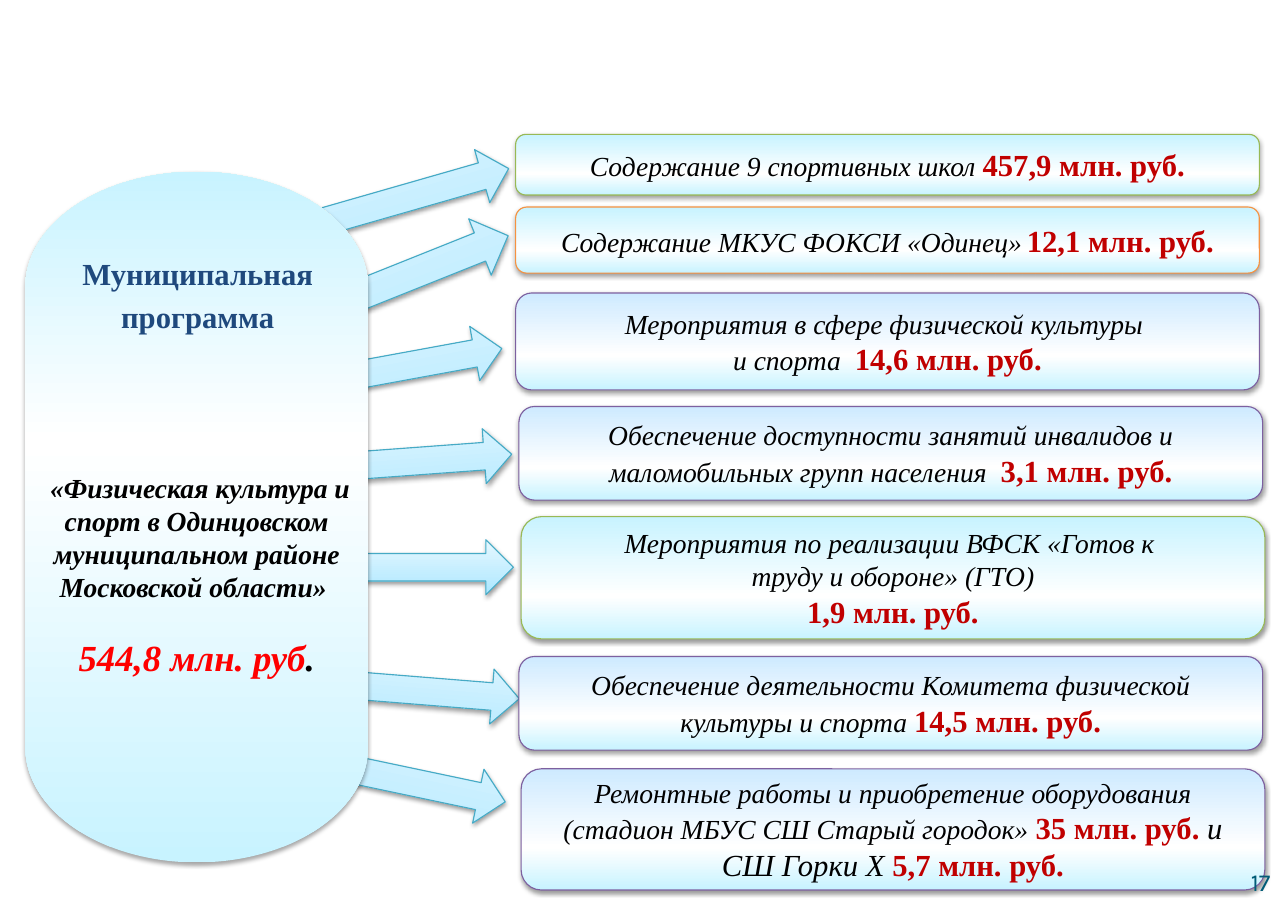
from dataclasses import dataclass

from lxml import etree
from pptx import Presentation
from pptx.dml.color import RGBColor
from pptx.enum.shapes import MSO_SHAPE
from pptx.enum.text import MSO_ANCHOR, PP_ALIGN
from pptx.oxml.ns import qn
from pptx.util import Emu, Pt

ARROW = MSO_SHAPE.RIGHT_ARROW
DISK = MSO_SHAPE.FLOWCHART_MAGNETIC_DISK
ROUND = MSO_SHAPE.ROUNDED_RECTANGLE
MIDDLE = MSO_ANCHOR.MIDDLE
CENTER = PP_ALIGN.CENTER
RIGHT = PP_ALIGN.RIGHT

PX = 9144  # 100 px to the inch
SERIF = "Times New Roman"
COLORS = {
    "black": "000000", "sum": "C00000", "total": "FF0000", "head": "1F497D",
    "page": "005B76", "white": "FFFFFF", "aqua": "C8F3FF", "sky": "CEEAFF",
    "deep": "A7E6FF", "mid": "C1EDFF", "pale": "E7F8FF",
    "teal": "46AAC5", "green": "98B955", "orange": "F69240", "purple": "7D60A0",
}


@dataclass(frozen=True)
class Style:
    size: int
    color: str = "black"
    bold: bool = False
    italic: bool = False
    font: str = SERIF


@dataclass(frozen=True)
class Run:
    text: str
    style: Style


@dataclass(frozen=True)
class Arrow:
    left: int
    top: int
    width: int
    height: int
    turn: float


@dataclass(frozen=True)
class Item:
    left: int
    top: int
    height: int
    edge: str
    lines: list[list[Run]]


BODY = Style(18, italic=True)
LARGE = Style(20, italic=True)
SUM = Style(20, "sum", bold=True)
GAP = Style(12)
HEAD = Style(20, "head", bold=True)
NAME = Style(18, bold=True, italic=True)
TOTAL = Style(24, "total", bold=True, italic=True)
DOT = Style(24, bold=True, italic=True)
PAGE = Style(16, "page", font="Karla")

ARROWS = [
    Arrow(42, 187, 428, 50, 344),
    Arrow(65, 593, 407, 50, 4.6),
    Arrow(37, 403, 428, 50, 355.8),
    Arrow(31, 330, 428, 50, 349.6),
    Arrow(56, 661, 407, 50, 11.9),
    Arrow(38, 490, 428, 50, 0),
    Arrow(90, 258, 385, 55, 338.2),
]

ITEMS = [
    Item(468, 122, 55, "green", [
        [Run("Содержание 9 спортивных школ ", BODY), Run("457,9 млн. руб.", SUM)]]),
    Item(468, 188, 60, "orange", [
        [Run("Содержание МКУС ФОКСИ «Одинец»", BODY), Run(" ", GAP),
         Run("12,1 млн. руб.", SUM)]]),
    Item(468, 266, 88, "purple", [
        [Run("Мероприятия в сфере физической культуры ", BODY)],
        [Run("и спорта  ", BODY), Run("14,6 млн. руб.", SUM)]]),
    Item(471, 369, 85, "purple", [
        [Run("Обеспечение доступности занятий инвалидов и "
             "маломобильных групп населения  ", BODY),
         Run("3,1 млн. руб.", SUM)]]),
    Item(473, 469, 111, "green", [
        [Run("Мероприятия по реализации ВФСК «Готов к ", BODY)],
        [Run("труду и обороне» (ГТО)", BODY)],
        [Run("1,9 млн. руб.", SUM)]]),
    Item(471, 596, 85, "purple", [
        [Run("Обеспечение деятельности Комитета физической "
             "культуры и спорта ", BODY),
         Run("14,5 млн. руб.", SUM)]]),
    Item(473, 698, 110, "purple", [
        [Run("Ремонтные работы и приобретение оборудования "
             "(стадион МБУС СШ Старый городок» ", BODY),
         Run("35 млн. руб. ", SUM), Run("и СШ Горки X ", LARGE),
         Run("5,7 млн. руб.", SUM)]]),
]


def px(*nums: int) -> list[Emu]:
    return [Emu(n * PX) for n in nums]


def rgb(name: str) -> RGBColor:
    return RGBColor.from_string(COLORS[name])


def add_color(node, name: str):
    return etree.SubElement(node, qn("a:srgbClr"), val=COLORS[name])


def add_shade(shape, alpha: int, dist: int) -> None:
    shape.shadow.inherit = False
    effects = shape._element.spPr.find(qn("a:effectLst"))
    shade = etree.SubElement(effects, qn("a:outerShdw"), blurRad="40000",
                             dist=str(dist), dir="5400000", rotWithShape="0")
    etree.SubElement(add_color(shade, "black"), qn("a:alpha"), val=str(alpha * 1000))


def add_form(slide, kind, box: tuple, stops: list, edge: str = "",
             alpha: int = 38, dist: int = 20000):
    shape = slide.shapes.add_shape(kind, *px(*box))
    shape.fill.gradient()
    shape.fill.gradient_angle = 90
    ramp = shape._element.spPr.find(".//" + qn("a:gsLst"))
    for old in list(ramp):
        ramp.remove(old)
    for pos, name in stops:
        add_color(etree.SubElement(ramp, qn("a:gs"), pos=str(pos * 1000)), name)
    if edge:
        shape.line.color.rgb = rgb(edge)
        shape.line.width = Pt(0.75)
    else:
        shape.line.fill.background()
    add_shade(shape, alpha, dist)
    return shape


def add_text(shape, lines: list[list[Run]], align=CENTER) -> None:
    frame = shape.text_frame
    frame.word_wrap = True
    frame.vertical_anchor = MIDDLE
    for num, runs in enumerate(lines):
        para = frame.add_paragraph() if num else frame.paragraphs[0]
        para.alignment = align
        for part in runs:
            run = para.add_run()
            run.text = part.text
            font, style = run.font, part.style
            font.name, font.size = style.font, Pt(style.size)
            font.bold, font.italic = style.bold, style.italic
            font.color.rgb = rgb(style.color)


def main() -> None:
    deck = Presentation()
    deck.slide_width, deck.slide_height = px(1169, 827)
    slide = deck.slides.add_slide(deck.slide_layouts[6])

    # Arrows fan out from behind the disk
    for item in ARROWS:
        box = (item.left, item.top, item.width, item.height)
        arrow = add_form(slide, ARROW, box, [(0, "deep"), (35, "mid"), (100, "pale")], "teal")
        arrow.rotation = item.turn

    # Disk with the programme name and total
    disk = add_form(slide, DISK, (23, 156, 311, 627),
                    [(0, "aqua"), (61, "white"), (100, "aqua")], alpha=35, dist=23000)
    add_text(disk, [
        [Run(" «Физическая культура и спорт в Одинцовском "
             "муниципальном районе Московской области» ", NAME)],
        [Run("544,8 млн. руб", TOTAL), Run(".", DOT)]])
    disk.text_frame.paragraphs[1].space_before = Pt(21)

    # Heading on the disk
    head = slide.shapes.add_textbox(*px(41, 230, 277, 101))
    add_text(head, [[Run("Муниципальная программа", HEAD)]])
    head.text_frame.margin_top, head.text_frame.margin_bottom = px(0, 31)
    head.text_frame.paragraphs[0].line_spacing = 1.15

    # Spending items
    for item in ITEMS:
        top = "sky" if item.edge == "purple" else "aqua"
        box = add_form(slide, ROUND, (item.left, item.top, 675, item.height),
                       [(0, "aqua"), (35, "white"), (100, top)], item.edge)
        add_text(box, item.lines)

    # Page number
    page = slide.shapes.add_textbox(*px(1093, 778, 71, 44))
    add_text(page, [[Run("17", PAGE)]], RIGHT)
    page.text_frame.margin_left, page.text_frame.margin_right = px(11, 11)

    deck.save("out.pptx")


if __name__ == "__main__":
    main()
